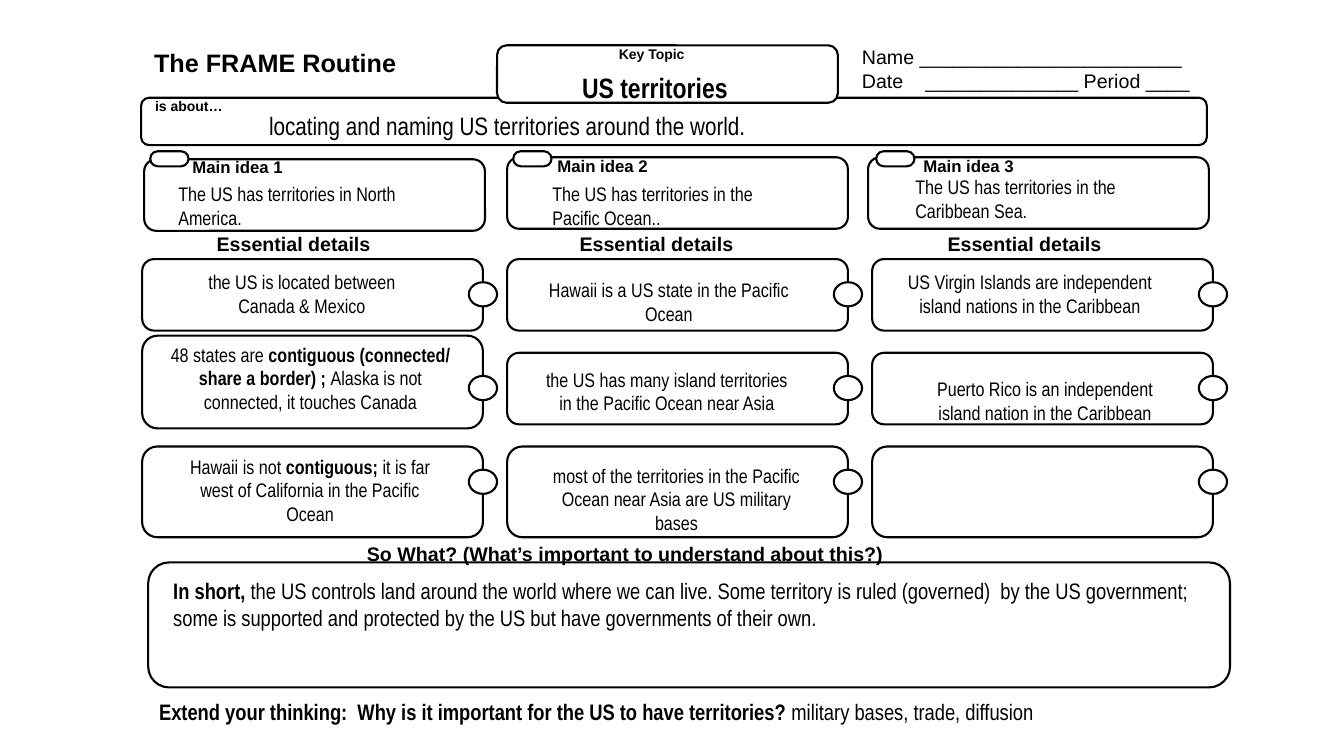
from lxml import etree
from pptx import Presentation
from pptx.dml.color import RGBColor
from pptx.enum.shapes import MSO_SHAPE
from pptx.enum.text import PP_ALIGN
from pptx.oxml.ns import qn
from pptx.util import Inches, Pt

ROUND, OVAL = MSO_SHAPE.ROUNDED_RECTANGLE, MSO_SHAPE.OVAL
LEFT, CENTER = PP_ALIGN.LEFT, PP_ALIGN.CENTER
COLORS = {"ink": "000000", "paper": "FFFFFF"}
SANS, NARROW = "Arial", "Arial Narrow"
INK = RGBColor.from_string(COLORS["ink"])
PAPER = RGBColor.from_string(COLORS["paper"])

COL_X, COL_STEP, BOX_W = 1.41, 3.62, 3.38
ROW_Y, ROW_STEP = 2.57, 0.93
ROW_H = [0.71, 0.71, 0.9]
LINK_W, LINK_H = 0.28, 0.24

prs = Presentation()
prs.slide_width, prs.slide_height = Inches(13.33), Inches(7.5)
s = prs.slides.add_slide(prs.slide_layouts[6])


def add_box(x, y, w, h, kind=ROUND, filled=False, adj=0.167):
    sp = s.shapes.add_shape(kind, Inches(x), Inches(y), Inches(w), Inches(h))
    sp.shadow.inherit = False
    if kind == ROUND:
        sp.adjustments[0] = adj
    if filled:
        sp.fill.solid()
        sp.fill.fore_color.rgb = PAPER
    else:
        sp.fill.background()
    sp.line.color.rgb = INK
    sp.line.width = Pt(1.5)


def add_text(x, y, w, h, text, size=14, name=NARROW, align=LEFT, tab=None):
    tf = s.shapes.add_textbox(Inches(x), Inches(y), Inches(w), Inches(h)).text_frame
    tf.word_wrap = True
    for i, line in enumerate(text.split("\n")):
        p = tf.add_paragraph() if i else tf.paragraphs[0]
        p.alignment = align
        if tab:
            tabs = etree.SubElement(p._p.get_or_add_pPr(), qn("a:tabLst"))
            etree.SubElement(tabs, qn("a:tab"), pos=str(Inches(tab)), algn="l")
        for j, part in enumerate(line.split("**")):
            if part:
                r = p.add_run()
                r.text = part
                font = {"name": name, "size": Pt(size), "bold": j % 2 == 1}
                for key, value in font.items():
                    setattr(r.font, key, value)
                r.font.color.rgb = INK


add_box(1.4, 0.97, 10.57, 0.47)
add_box(1.47, 5.58, 10.73, 1.24)
add_box(4.93, 0.45, BOX_W, 0.57, filled=True)

for col in range(3):
    x = COL_X + col * COL_STEP
    for row in range(3):
        y = ROW_Y + row * ROW_STEP
        if (col, row) == (0, 1):
            add_box(x, 3.33, BOX_W, 0.92)
        else:
            add_box(x, y, BOX_W, ROW_H[row])
        add_box(x + BOX_W - LINK_W / 2, y + 0.23, LINK_W, LINK_H, OVAL, True)

main_ideas = [
    (1.43, 1.58, 1.81, 1.51, 2.05, 1.67, 1.76, "The US has territories in North America."),
    (5.03, 1.56, 5.43, 1.5, 5.65, 5.38, 1.76, "The US has territories in the Pacific Ocean.."),
    (8.61, 1.56, 9.06, 1.5, 9.3, 8.98, 1.69, "The US has territories in the Caribbean Sea."),
]
for i, (x, y, head_x, head_y, sub_x, idea_x, idea_y, idea) in enumerate(main_ideas):
    add_box(x, y, BOX_W, 0.71)
    add_box(1.49 + i * 3.6, 1.5, 0.38, 0.15, filled=True, adj=0.5)
    add_text(head_x, head_y, 1.4, 0.3, f"**Main idea {i + 1}**", 12, SANS)
    add_text(sub_x, 2.25, 2.2, 0.34, "**Essential details**", 14, SANS)
    add_text(idea_x, idea_y, 2.65, 0.57, idea)

details = [
    (1.67, 2.63, 2.65, 0.57, "the US is located between Canada & Mexico"),
    (1.57, 3.35, 3.02, 0.81, "48 states are **contiguous (connected/ share a border) ; **"
     "Alaska is not connected, it touches Canada"),
    (1.75, 4.46, 2.65, 0.81, "Hawaii is not **contiguous; **"
     "it is far west of California in the Pacific Ocean"),
    (5.31, 2.71, 2.65, 0.57, "Hawaii is a US state in the Pacific Ocean"),
    (5.29, 3.6, 2.65, 0.57, "the US has many island territories in the Pacific Ocean near Asia"),
    (5.27, 4.55, 2.88, 0.81, "most of the territories in the Pacific Ocean near Asia "
     "are US military bases"),
    (8.89, 2.63, 2.65, 0.57, "US Virgin Islands are independent island nations in the Caribbean"),
    (9.04, 3.69, 2.65, 0.57, "Puerto Rico is an independent island nation in the Caribbean"),
]
for detail in details:
    add_text(*detail, align=CENTER)

add_text(1.43, 0.42, 3.33, 0.4, "**The FRAME Routine**", 18, SANS)
add_text(6.04, 0.4, 1.1, 0.27, "**Key Topic**", 10, SANS)
add_text(5.19, 0.65, 2.61, 0.44, "**US territories**", 20, align=CENTER)
add_text(8.45, 0.4, 3.6, 0.57,
         "Name ________________________\nDate\t______________ Period ____", 14, SANS, tab=0.63)
add_text(1.44, 0.92, 1.11, 0.27, "**is about…**", 10, SANS)
add_text(2.57, 1.05, 6.06, 0.4, "locating and naming US territories around the world.", 18)
add_text(3.54, 5.33, 6.77, 0.34,
         "**So What? (What’s important to understand about this?)**", 14, SANS)
add_text(1.62, 5.68, 10.37, 0.64,
         "**In short, **the US controls land around the world where we can live. "
         "Some territory is ruled (governed)  by the US government; some is supported "
         "and protected by the US but have governments of their own.", 16)
add_text(1.48, 6.88, 10.6, 0.37,
         "**Extend your thinking:  Why is it important for the US to have territories? **"
         "military bases, trade, diffusion", 16)

prs.save("out.pptx")
